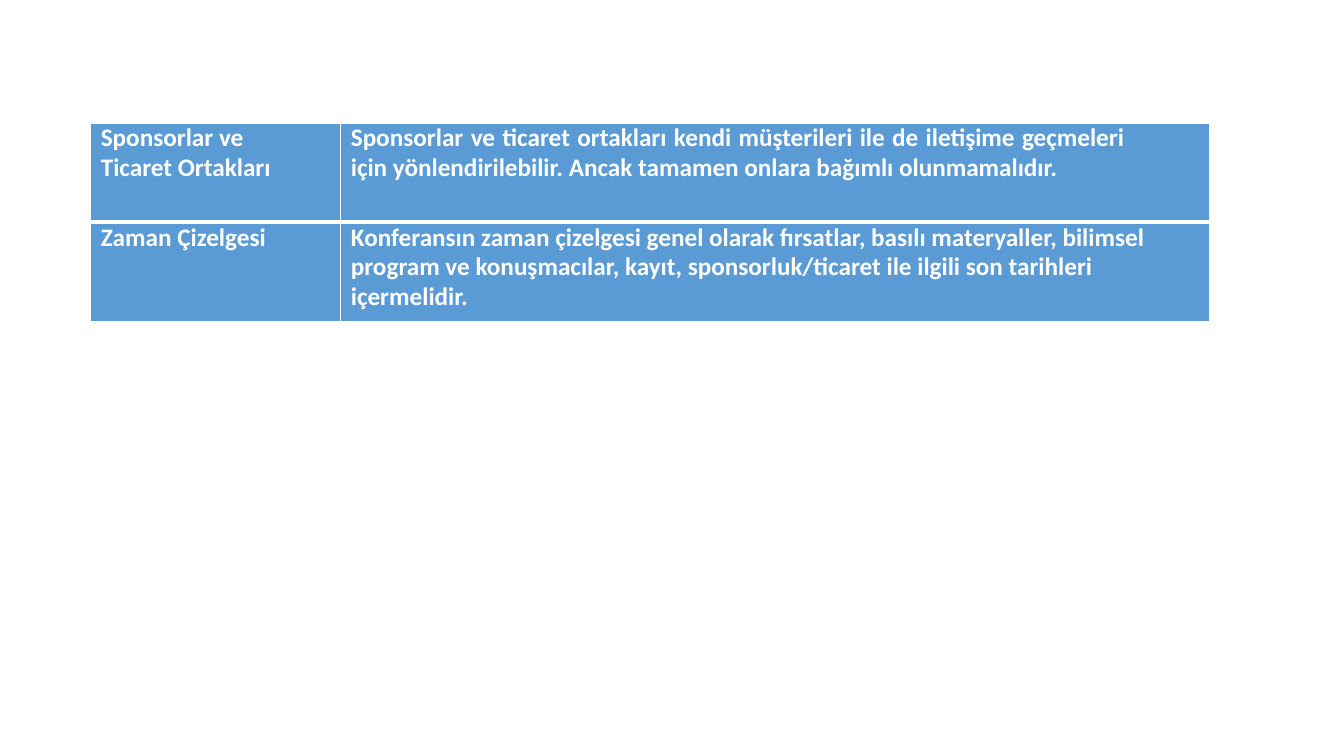
from lxml.etree import SubElement
from pptx import Presentation
from pptx.dml.color import RGBColor
from pptx.enum.text import PP_ALIGN
from pptx.oxml.ns import qn
from pptx.util import Inches, Pt

WHITE = RGBColor(0xFF, 0xFF, 0xFF)
BLUE = RGBColor(0x5B, 0x9B, 0xD5)

COLUMN_WIDTHS = (2.48, 8.62)
ROW_HEIGHT = 0.985
RUN_FORMAT = {"name": "Calibri", "size": Pt(18), "bold": True}
TIGHT = {"line_spacing": 0.97, "space_before": Pt(3.1)}
CELL_MARGINS = ("margin_left", "margin_top", "margin_right", "margin_bottom")

ROWS = (
    (
        ("Sponsorlar ve Ticaret Ortakları", TIGHT, 0.5),
        (
            "Sponsorlar ve ticaret ortakları kendi müşterileri ile de iletişime "
            "geçmeleri için yönlendirilebilir. Ancak tamamen onlara bağımlı "
            "olunmamalıdır.",
            {**TIGHT, "alignment": PP_ALIGN.JUSTIFY},
            0.84,
        ),
    ),
    (
        ("Zaman Çizelgesi", {"space_before": Pt(2.8)}, 0),
        (
            "Konferansın zaman çizelgesi genel olarak fırsatlar, basılı "
            "materyaller, bilimsel program ve konuşmacılar, kayıt, "
            "sponsorluk/ticaret ile ilgili son tarihleri içermelidir.",
            TIGHT,
            0.5,
        ),
    ),
)


def apply_format(target, values):
    for name, value in values.items():
        setattr(target, name, value)


def add_borders(cell, widths):
    properties = cell._tc.get_or_add_tcPr()
    for index, (side, width) in enumerate(widths.items()):
        line = SubElement(properties, qn(f"a:{side}"), w=str(Pt(width)))
        fill = SubElement(line, qn("a:solidFill"))
        SubElement(fill, qn("a:srgbClr"), val=str(WHITE))
        properties.remove(line)
        properties.insert(index, line)


def fill_cell(cell, text, paragraph_format, right_indent):
    apply_format(cell, dict.fromkeys(CELL_MARGINS, 0))
    cell.fill.solid()
    cell.fill.fore_color.rgb = BLUE
    paragraph = cell.text_frame.paragraphs[0]
    apply_format(paragraph, paragraph_format)
    properties = paragraph._p.get_or_add_pPr()
    properties.set("marL", str(Inches(0.1)))
    properties.set("marR", str(Inches(right_indent)))
    run = paragraph.add_run()
    run.text = text
    apply_format(run.font, RUN_FORMAT)
    run.font.color.rgb = WHITE


def add_planning_table(slide):
    table = slide.shapes.add_table(
        len(ROWS), len(COLUMN_WIDTHS), Inches(0.9), Inches(1.22),
        Inches(sum(COLUMN_WIDTHS)), Inches(ROW_HEIGHT * len(ROWS)),
    ).table
    for column, width in zip(table.columns, COLUMN_WIDTHS):
        column.width = Inches(width)
    for row_index, row in enumerate(ROWS):
        table.rows[row_index].height = Inches(ROW_HEIGHT)
        top, bottom = (1, 3) if row_index == 0 else (3, 1)
        for column_index, content in enumerate(row):
            cell = table.cell(row_index, column_index)
            fill_cell(cell, *content)
            add_borders(cell, {"lnL": 1, "lnR": 1, "lnT": top, "lnB": bottom})


def main():
    presentation = Presentation()
    presentation.slide_width = Inches(13.33)
    presentation.slide_height = Inches(7.5)
    slide = presentation.slides.add_slide(presentation.slide_layouts[6])
    add_planning_table(slide)
    presentation.save("out.pptx")


if __name__ == "__main__":
    main()
